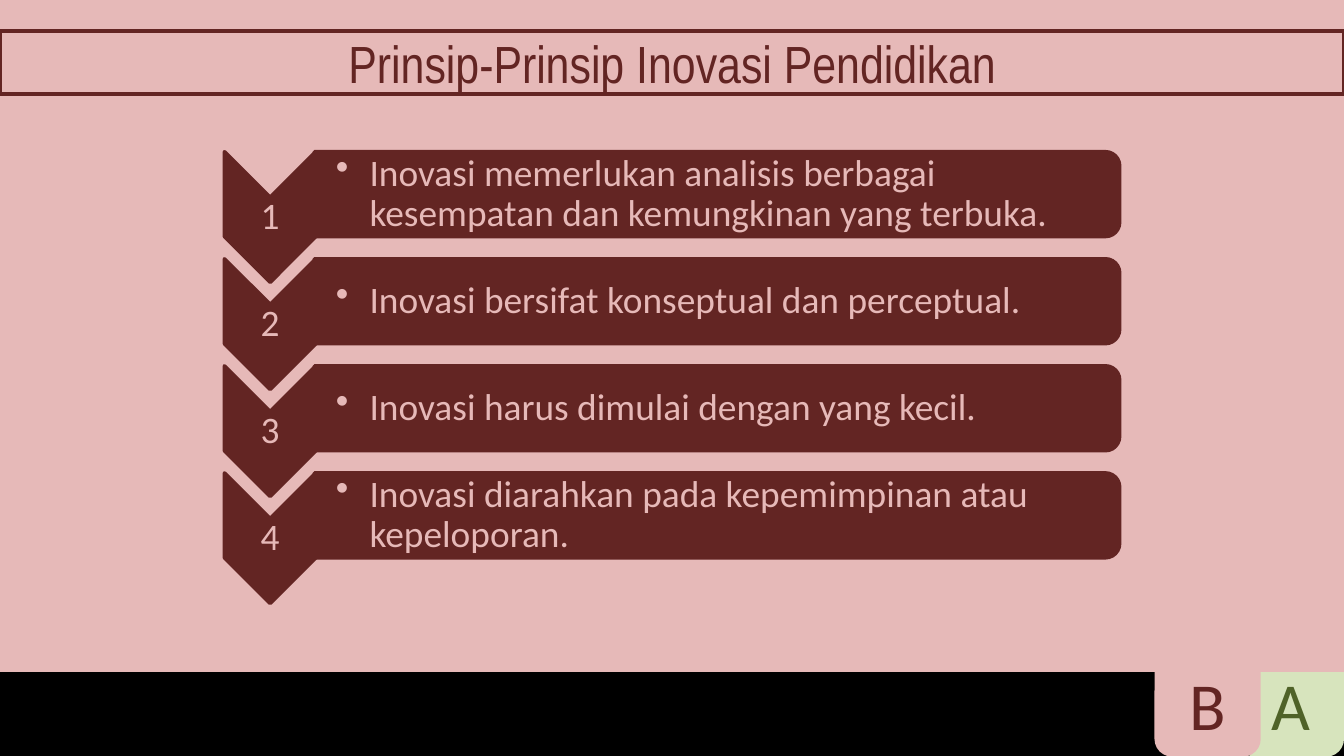
"""Build the slide on the principles of educational innovation."""
import pptx
import pptx.dml.color
import pptx.enum.shapes
import pptx.enum.text
import pptx.oxml
import pptx.oxml.ns
import pptx.util

TITLE = "Prinsip-Prinsip Inovasi Pendidikan"
PRINCIPLES = [
    "Inovasi memerlukan analisis berbagai kesempatan dan kemungkinan yang terbuka.",
    "Inovasi bersifat konseptual dan perceptual.",
    "Inovasi harus dimulai dengan yang kecil.",
    "Inovasi diarahkan pada kepemimpinan atau kepeloporan.",
]
TABS = [("A", 9.21, "green", "dark_green"), ("B", 8.59, "pink", "maroon")]

THEME = {
    "colors": {"black": "000000", "pink": "E6B9B8", "maroon": "632523",
               "green": "D7E4BD", "dark_green": "4F6228"},
    "fonts": {"title": "Arial Narrow", "body": "Calibri"},
    "sizes": {"title": 28, "body": 20, "tab": 36},
    "line": 2,
}
WIDTH = 10
HEIGHT = WIDTH * 9 / 16
PANEL_HEIGHT = 5
TAB_TOP, TAB_SIZE = 4.84, 0.79
FIRST_TOP, PITCH = 1.13, 2.39 / 3
ARROW_LEFT, ARROW_WIDTH, ARROW_HEIGHT = 1.67, 0.68, 0.97
BAR_LEFT, BAR_WIDTH, BAR_HEIGHT = 2.34, 5.99, 0.63
TEXT_WIDTH, TEXT_HEIGHT = 5.96, 0.57
NUMBER_DROP, NUMBER_HEIGHT = 0.34, 0.29

Inches = pptx.util.Inches
Shape = pptx.enum.shapes.MSO_SHAPE
Align = pptx.enum.text.PP_ALIGN


def color(name):
    return pptx.dml.color.RGBColor.from_string(THEME["colors"][name])


def outline(shape):
    shape.line.color.rgb = color("maroon")
    shape.line.width = pptx.util.Pt(THEME["line"])


def add_block(page, kind, left, top, width, height, fill):
    shape = page.shapes.add_shape(kind, *map(Inches, (left, top, width, height)))
    shape.shadow.inherit = False
    shape.fill.solid()
    shape.fill.fore_color.rgb = color(fill)
    shape.line.fill.background()
    return shape


def add_turned(page, kind, left, top, width, height):
    """Add a quarter-turned shape that covers the given area."""
    shift = (width - height) / 2
    shape = add_block(page, kind, left + shift, top - shift, height, width, "maroon")
    shape.rotation = 90
    outline(shape)


def write(box, text, role, ink, align=Align.CENTER, font="body"):
    frame = box.text_frame
    frame.word_wrap = True
    frame.auto_size = pptx.enum.text.MSO_AUTO_SIZE.NONE
    frame.vertical_anchor = pptx.enum.text.MSO_ANCHOR.MIDDLE
    para = frame.paragraphs[0]
    para.alignment = align
    span = para.add_run()
    span.text = text
    span.font.name = THEME["fonts"][font]
    span.font.size = pptx.util.Pt(THEME["sizes"][role])
    span.font.color.rgb = color(ink)
    return para


def add_label(page, left, top, width, height, text, align, inset):
    box = page.shapes.add_textbox(*map(Inches, (left, top, width, height)))
    frame = box.text_frame
    frame.margin_left = Inches(inset)
    frame.margin_top = frame.margin_right = frame.margin_bottom = Inches(0.01)
    para = write(box, text, "body", "pink", align)
    para.line_spacing = 0.9
    return para


def add_bullet(para):
    properties = para._p.get_or_add_pPr()
    properties.set("marL", str(Inches(0.25)))
    properties.set("indent", str(Inches(-0.25)))
    mark = pptx.oxml.parse_xml(
        f'<a:buChar {pptx.oxml.ns.nsdecls("a")} char="••"/>')
    properties.append(mark)
    para.level = 1
    para.font.size = pptx.util.Pt(THEME["sizes"]["body"])
    para.font.name = THEME["fonts"]["body"]


def add_principle(page, index, text):
    top = FIRST_TOP + index * PITCH
    add_turned(page, Shape.CHEVRON, ARROW_LEFT, top, ARROW_WIDTH, ARROW_HEIGHT)
    add_label(page, ARROW_LEFT, top + NUMBER_DROP, ARROW_WIDTH, NUMBER_HEIGHT,
              str(index + 1), Align.CENTER, 0.01)
    add_turned(page, Shape.ROUND_2_SAME_RECTANGLE, BAR_LEFT, top, BAR_WIDTH, BAR_HEIGHT)
    para = add_label(page, BAR_LEFT, top + (BAR_HEIGHT - TEXT_HEIGHT) / 2, TEXT_WIDTH,
                     TEXT_HEIGHT, text, Align.LEFT, 0.16)
    add_bullet(para)


def add_title(page):
    title = page.shapes.title
    title.left, title.top, title.width, title.height = map(
        Inches, (0, 0.23, WIDTH, 0.47))
    outline(title)
    write(title, TITLE, "title", "maroon", font="title")
    page.shapes._spTree.append(title._element)


def main():
    deck = pptx.Presentation()
    deck.slide_width, deck.slide_height = Inches(WIDTH), Inches(HEIGHT)
    page = deck.slides.add_slide(deck.slide_layouts[5])
    page.background.fill.solid()
    page.background.fill.fore_color.rgb = color("black")
    for letter, left, fill, ink in TABS:
        tab = add_block(page, Shape.ROUNDED_RECTANGLE, left, TAB_TOP, TAB_SIZE, TAB_SIZE, fill)
        write(tab, letter, "tab", ink)
    add_block(page, Shape.RECTANGLE, 0, 0, WIDTH, PANEL_HEIGHT, "pink")
    add_title(page)
    for index, text in enumerate(PRINCIPLES):
        add_principle(page, index, text)
    deck.save("out.pptx")


if __name__ == "__main__":
    main()
